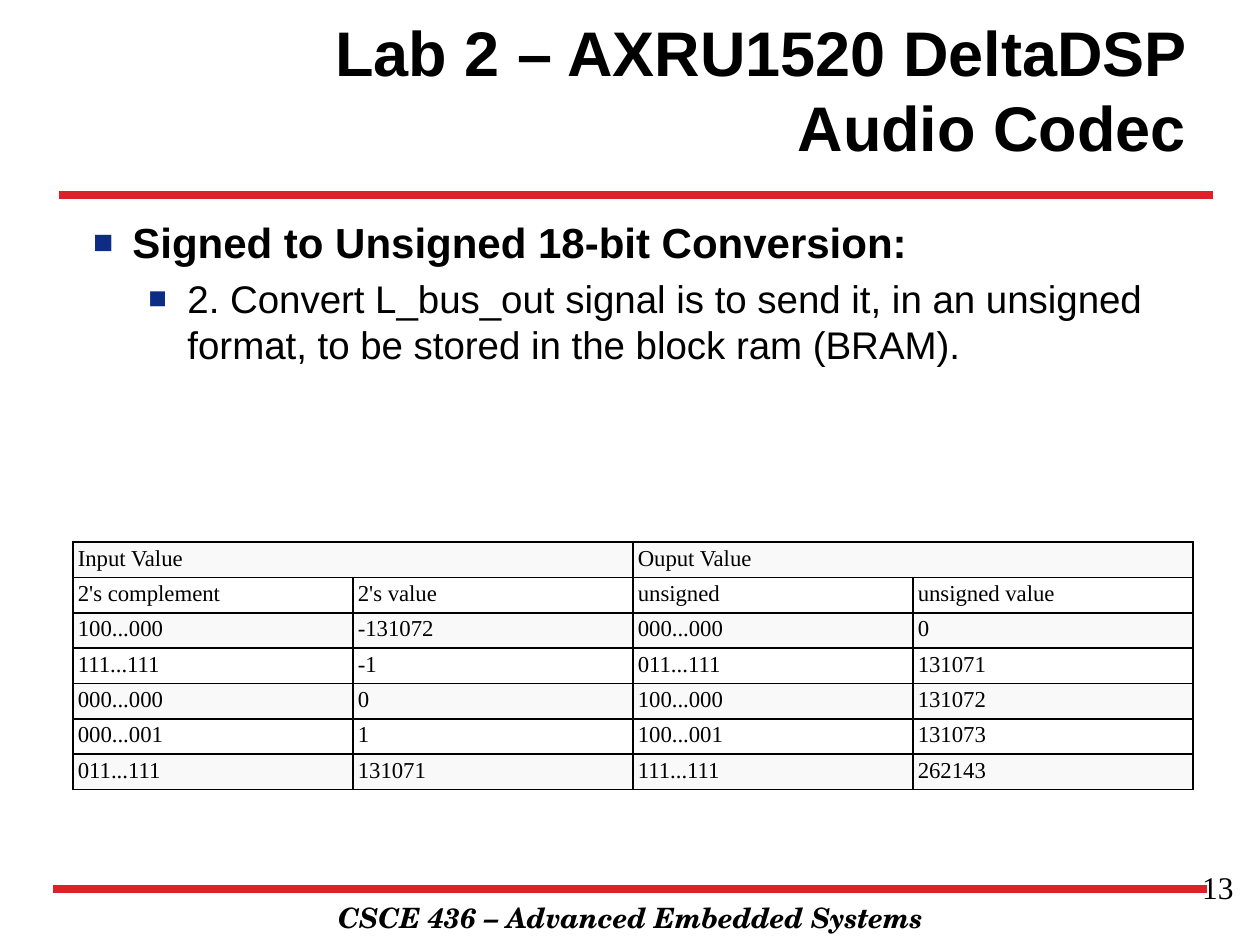
from lxml.etree import SubElement
from pptx import Presentation
from pptx.dml.color import RGBColor
from pptx.enum.shapes import MSO_CONNECTOR as Connector
from pptx.enum.text import MSO_ANCHOR as Anchor, PP_ALIGN as Align
from pptx.oxml.ns import qn
from pptx.util import Cm, Pt

BLACK, RED, NAVY = "000000", "DD212B", "0C2D83"
ROW_FILLS = ("F9F9F9", "FFFFFF")
SANS, SERIF, SCHOOL = "Arial", "Times New Roman", "TeX Gyre Schola"

HEADINGS = ("Input Value", "Ouput Value")
CONVERSIONS = (
    ("2's complement", "2's value", "unsigned", "unsigned value"),
    ("100...000", "-131072", "000...000", "0"),
    ("111...111", "-1", "011...111", "131071"),
    ("000...000", "0", "100...000", "131072"),
    ("000...001", "1", "100...001", "131073"),
    ("011...111", "131071", "111...111", "262143"),
)


def color(value):
    return RGBColor.from_string(value)


def set_font(para, name, size, bold=False, italic=False):
    font = para.font
    font.name, font.size = name, Pt(size)
    font.bold, font.italic = bold, italic
    font.color.rgb = color(BLACK)


def add_box(page, left, top, width, height, anchor=Anchor.TOP):
    """Add an empty wrapping text box, measured in cm, and return its frame."""
    box = page.shapes.add_textbox(Cm(left), Cm(top), Cm(width), Cm(height))
    frame = box.text_frame
    frame.word_wrap = True
    frame.vertical_anchor = anchor
    return frame


def add_label(page, area, text, align, name, size, anchor=Anchor.TOP, **style):
    para = add_box(page, *area, anchor=anchor).paragraphs[0]
    para.text = text
    para.alignment = align
    set_font(para, name, size, **style)


def add_rule(page, left, top, width):
    rule = page.shapes.add_connector(
        Connector.STRAIGHT, Cm(left), Cm(top), Cm(left + width), Cm(top))
    rule.line.color.rgb = color(RED)
    rule.line.width = Pt(4.5)
    SubElement(rule._element.spPr, qn("a:effectLst"))


def add_bullet(para, indent):
    props = para._p.get_or_add_pPr()
    props.set("marL", str(Cm(indent)))
    props.set("indent", str(-Cm(0.79)))
    tint = SubElement(props, qn("a:buClr"))
    SubElement(tint, qn("a:srgbClr"), val=NAVY)
    SubElement(props, qn("a:buSzPct"), val="80000")
    SubElement(props, qn("a:buFont"), typeface=SANS)
    SubElement(props, qn("a:buChar"), char="■")


def add_body(page):
    frame = add_box(page, 1.63, 4.24, 22.58, 12.01)
    topic = frame.paragraphs[0]
    topic.text = "Signed to Unsigned 18-bit Conversion:"
    add_bullet(topic, 0.79)
    set_font(topic, SANS, 24, bold=True)

    step = frame.add_paragraph()
    step.text = ("2. Convert L_bus_out signal is to send it, in an unsigned "
                 "format, to be stored in the block ram (BRAM).")
    step.level = 1
    add_bullet(step, 1.9)
    step.space_before = Pt(4.4)
    set_font(step, SANS, 22)


def add_borders(cell):
    props = cell._tc.get_or_add_tcPr()
    for side in ("lnL", "lnR", "lnT", "lnB"):
        edge = SubElement(props, qn(f"a:{side}"), w=str(Pt(1)))
        fill = SubElement(edge, qn("a:solidFill"))
        SubElement(fill, qn("a:srgbClr"), val=BLACK)


def style_cell(cell, fill):
    cell.margin_left = cell.margin_right = Cm(0.1)
    cell.margin_top = cell.margin_bottom = Cm(0.08)
    add_borders(cell)
    cell.fill.solid()
    cell.fill.fore_color.rgb = color(fill)
    set_font(cell.text_frame.paragraphs[0], SERIF, 13)


def add_conversion_table(page):
    rows, columns = len(CONVERSIONS) + 1, len(CONVERSIONS[0])
    table = page.shapes.add_table(
        rows, columns, Cm(1.47), Cm(10.93), Cm(22.58), Cm(4.98)).table
    for index, heading in enumerate(HEADINGS):
        start = table.cell(0, 2 * index)
        start.merge(table.cell(0, 2 * index + 1))
        start.text = heading
    for row, values in enumerate(CONVERSIONS, 1):
        for column, value in enumerate(values):
            table.cell(row, column).text = value
    for row in range(rows):
        for column in range(columns):
            style_cell(table.cell(row, column), ROW_FILLS[row % 2])


def main():
    deck = Presentation()
    deck.slide_width, deck.slide_height = Cm(25.4), Cm(19.05)
    page = deck.slides.add_slide(deck.slide_layouts[6])

    add_label(page, (3.61, 18.03, 18.21, 0.94),
              "CSCE 436 – Advanced Embedded Systems",
              Align.CENTER, SCHOOL, 16, bold=True, italic=True)
    add_rule(page, 1.07, 17.93, 23.27)
    add_rule(page, 1.18, 3.93, 23.27)
    add_label(page, (5.31, 0.2, 18.85, 3.18),
              "Lab 2 – AXRU1520 DeltaDSP Audio Codec",
              Align.RIGHT, SANS, 36, anchor=Anchor.MIDDLE, bold=True)
    add_conversion_table(page)
    add_label(page, (19.2, 17.37, 5.92, 1.32), "13", Align.RIGHT, SERIF, 18)
    add_body(page)

    deck.save("out.pptx")


if __name__ == "__main__":
    main()
